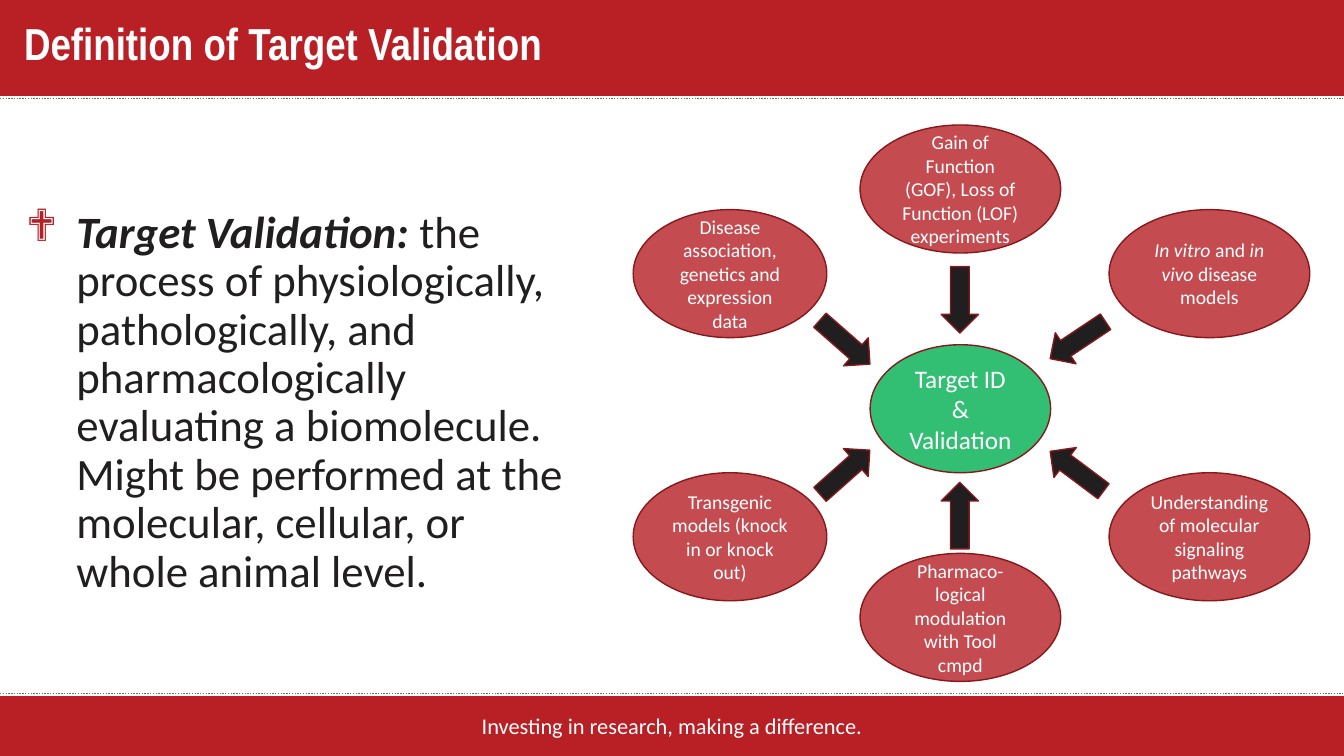
import pptx
import pptx.dml.color
import pptx.enum.dml
import pptx.enum.shapes
import pptx.enum.text
import pptx.oxml
import pptx.oxml.ns
import pptx.util

PX = 9144  # EMU, 100 px to the inch
COLORS = {
    "band": "B82025", "rule": "6E6C59", "accent": "B62025", "edge": "87181B",
    "hub": "00B050", "ink": "201E1E", "white": "FFFFFF",
}
NS = pptx.oxml.ns.nsdecls("a")
SHAPES = pptx.enum.shapes.MSO_SHAPE
ALIGN = pptx.enum.text.PP_ALIGN
ANCHOR = pptx.enum.text.MSO_ANCHOR


def add_preset(kind, area, fill, edge, angle=0):
    shape = page.shapes.add_shape(kind, *[value * PX for value in area])
    shape.shadow.inherit = False
    shape.rotation = angle
    shape.fill.solid()
    shape.fill.fore_color.rgb = pptx.dml.color.RGBColor.from_string(COLORS[fill])
    shape.line.color.rgb = pptx.dml.color.RGBColor.from_string(COLORS[edge])
    shape.line.width = pptx.util.Pt(1)
    return shape


def write(para, spans, color, **formats):
    """Add (text, font overrides) spans to a paragraph."""
    for text, changes in spans:
        span = para.add_run()
        span.text = text
        span.font.color.rgb = pptx.dml.color.RGBColor.from_string(COLORS[color])
        for name, value in {"name": "Calibri", **formats, **changes}.items():
            setattr(span.font, name, value)


deck = pptx.Presentation()
deck.slide_width, deck.slide_height = 1333 * PX, 750 * PX
page = deck.slides.add_slide(deck.slide_layouts[6])

# Header and footer bands with dotted rules
for top, height, rule_y in [(0, 95, 98), (691, 58, 688)]:
    add_preset(SHAPES.RECTANGLE, (0, top, 1333, height), "band", "band")
    rule = page.shapes.add_connector(
        pptx.enum.shapes.MSO_CONNECTOR.STRAIGHT, 0, rule_y * PX, 1333 * PX, rule_y * PX)
    rule.line.color.rgb = pptx.dml.color.RGBColor.from_string(COLORS["rule"])
    rule.line.width = pptx.util.Pt(1)
    rule.line.dash_style = pptx.enum.dml.MSO_LINE.ROUND_DOT
    rule._element.spPr.append(pptx.oxml.parse_xml(f"<a:effectLst {NS}/>"))

# Title, definition and footer text
definition = [
    ("Target Validation: ", {"bold": True, "italic": True}),
    ("the process of physiologically, pathologically, and pharmacologically "
     "evaluating a biomolecule. Might be performed at the molecular, cellular, "
     "or whole animal level.", {}),
]
title = [("Definition of Target Validation", {"name": "Arial Narrow", "bold": True})]
slogan = [("Investing in research, making a difference.", {})]
texts = [
    ((14, 17, 1103, 56), title, "white", 32, 0.9, ALIGN.LEFT, False),
    ((16, 203, 570, 405), definition, "ink", 32, 0.9, ALIGN.LEFT, True),
    ((0, 702, 1333, 37), slogan, "white", 16, 1.0, ALIGN.CENTER, False),
]
for area, spans, color, size, spacing, align, bulleted in texts:
    box = page.shapes.add_textbox(*[value * PX for value in area])
    box.text_frame.word_wrap = True
    para = box.text_frame.paragraphs[0]
    para.alignment = align
    para.line_spacing = spacing
    if bulleted:
        props = para._p.get_or_add_pPr()
        props.set("marL", str(50 * PX))
        props.set("indent", str(-50 * PX))
        for xml in (f'<a:buClr {NS}><a:srgbClr val="{COLORS["accent"]}"/></a:buClr>',
                    f'<a:buFont {NS} typeface="Wingdings"/>',
                    f'<a:buChar {NS} char="❖"/>'):
            props.append(pptx.oxml.parse_xml(xml))
    write(para, spans, color, size=pptx.util.Pt(size))

# Hub and the six kinds of evidence around it
slanted = {"italic": True}
ovals = [
    (863, 342, 179, "hub", 18, [("Target ID & Validation", {})]),
    (628, 208, 192, "accent", 14,
     [("Disease association, genetics and expression data", {})]),
    (853, 124, 199, "accent", 14,
     [("Gain of Function (GOF), Loss of Function (LOF) experiments", {})]),
    (1100, 208, 199, "accent", 14,
     [("In vitro ", slanted), ("and", {}), (" in vivo", slanted), (" disease models", {})]),
    (1100, 469, 199, "accent", 14,
     [("Understanding of molecular signaling pathways", {})]),
    (853, 549, 199, "accent", 14,
     [("Pharmaco-logical modulation with Tool cmpd", {})]),
    (628, 469, 192, "accent", 14,
     [("Transgenic models (knock in or knock out)", {})]),
]
for left, top, width, fill, size, spans in ovals:
    oval = add_preset(SHAPES.OVAL, (left, top, width, 127), fill, "edge")
    tint = oval._element.spPr.find(".//" + pptx.oxml.ns.qn("a:srgbClr"))
    tint.append(pptx.oxml.parse_xml(f'<a:alpha {NS} val="80000"/>'))
    oval.text_frame.word_wrap = True
    oval.text_frame.vertical_anchor = ANCHOR.MIDDLE
    para = oval.text_frame.paragraphs[0]
    para.alignment = ALIGN.CENTER
    write(para, spans, "white", size=pptx.util.Pt(size))

# Arrows pointing at the hub
arrows = [(805, 321, 41.3), (1035, 449, 216.8), (919, 279, 90),
          (805, 450, 318.4), (919, 493, 270), (1036, 319, 146.3)]
for left, top, angle in arrows:
    add_preset(SHAPES.RIGHT_ARROW, (left, top, 66, 37), "ink", "edge", angle)

deck.save("out.pptx")
